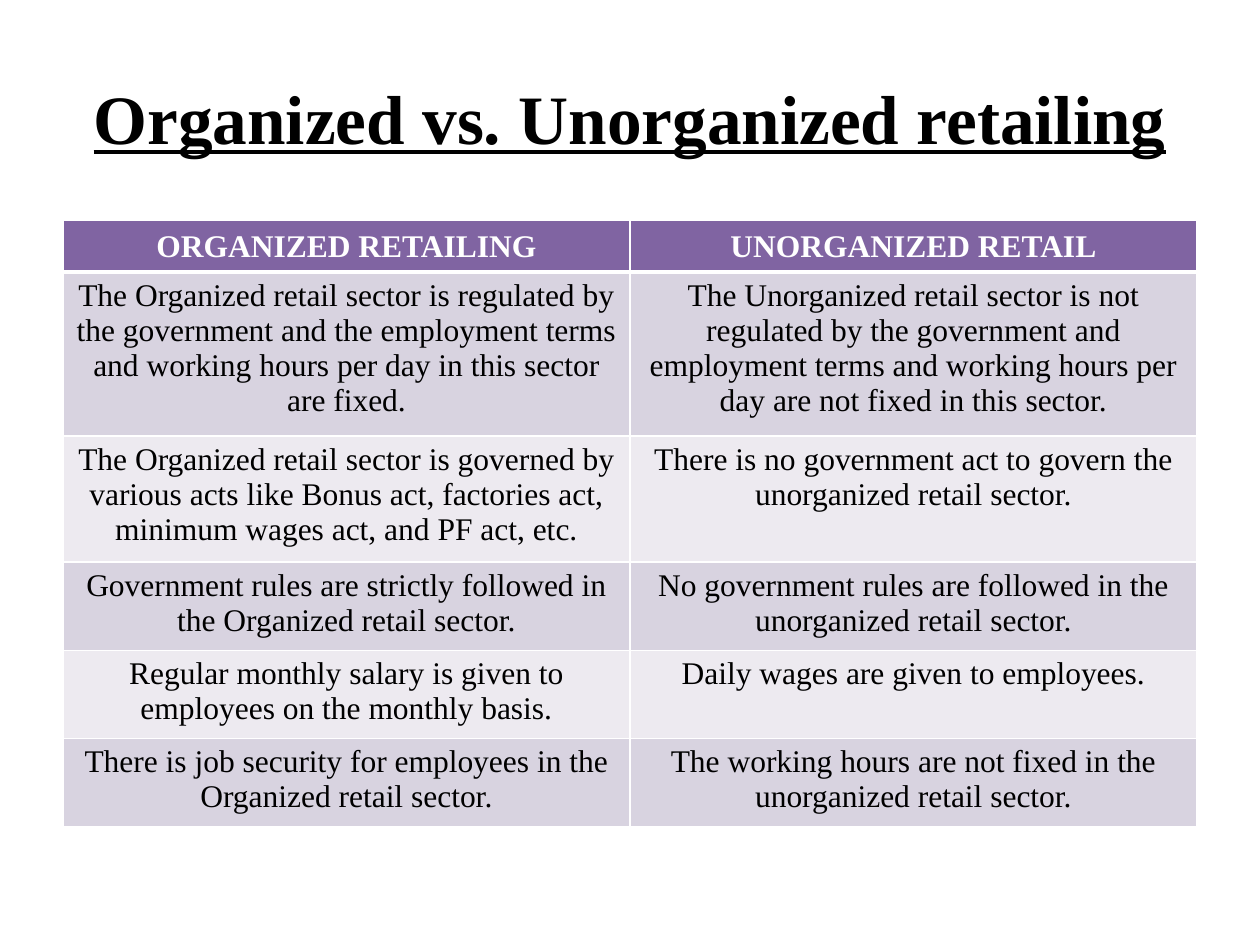
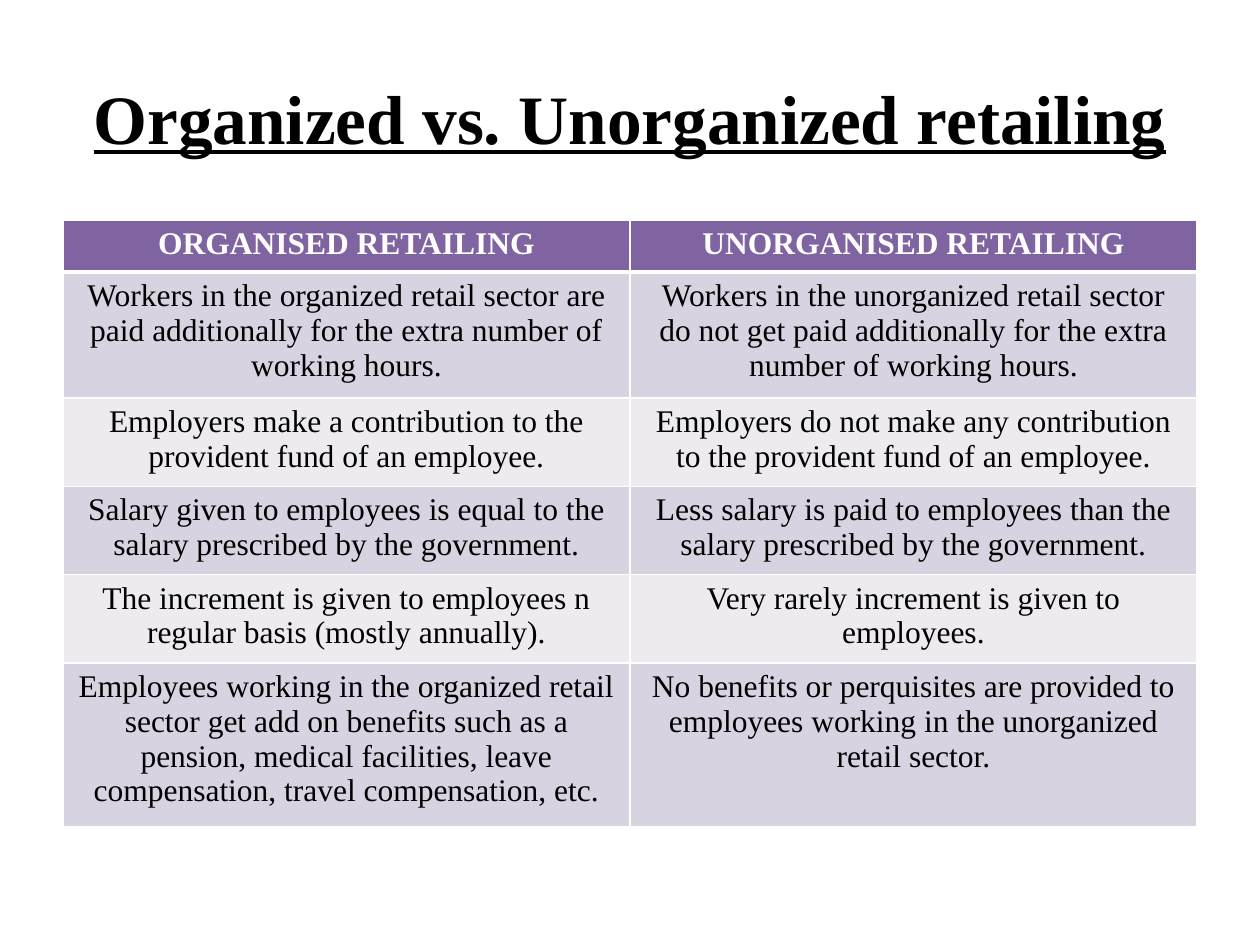
from dataclasses import dataclass

from lxml import etree
from pptx import Presentation
from pptx.dml.color import RGBColor
from pptx.enum import text
from pptx.oxml import ns
from pptx.util import Inches, Pt


@dataclass(frozen=True)
class Theme:
    font: str = "Times New Roman"
    ink: str = "000000"
    paper: str = "FFFFFF"
    head: str = "8064A2"
    bands: tuple = ("D8D3E0", "EDEAF0")
    title: float = 39.6
    body: float = 18
    thin: float = 1
    thick: float = 3


THEME = Theme()
TITLE = "Organized vs. Unorganized retailing"
TITLE_BOX = (0.5, 0.3, 9, 1.25)
TABLE_BOX = (0.5, 1.75, 9, 2.46)

RULES = [
    ("ORGANIZED RETAILING", "UNORGANIZED RETAIL"),
    ("The Organized retail sector is regulated by the government and the employment terms "
     "and working hours per day in this sector are fixed.",
     "The Unorganized retail sector is not regulated by the government and employment terms "
     "and working hours per day are not fixed in this sector."),
    ("The Organized retail sector is governed by various acts like Bonus act, factories act, "
     "minimum wages act, and PF act, etc.",
     "There is no government act to govern the unorganized retail sector."),
    ("Government rules are strictly followed in the Organized retail sector.",
     "No government rules are followed in the unorganized retail sector."),
    ("Regular monthly salary is given to employees on the monthly basis.",
     "Daily wages are given to employees."),
    ("There is job security for employees in the Organized retail sector.",
     "The working hours are not fixed in the unorganized retail sector."),
]

PAY = [
    ("ORGANISED RETAILING", "UNORGANISED RETAILING"),
    ("Workers in the organized retail sector are paid additionally for the extra number of "
     "working hours.",
     "Workers in the unorganized retail sector do not get paid additionally for the extra "
     "number of working hours."),
    ("Employers make a contribution to the provident fund of an employee.",
     "Employers do not make any contribution to the provident fund of an employee."),
    ("Salary given to employees is equal to the salary prescribed by the government.",
     "Less salary is paid to employees than the salary prescribed by the government."),
    ("The increment is given to employees n regular basis (mostly annually).",
     "Very rarely increment is given to employees."),
    ("Employees working in the organized retail sector get add on benefits such as a pension, "
     "medical facilities, leave compensation, travel compensation, etc.",
     "No benefits or perquisites are provided to employees working in the unorganized retail "
     "sector."),
]


def write(frame, words, size=THEME.body, color=THEME.ink, bold=False, line=False):
    frame.word_wrap = True
    para = frame.paragraphs[0]
    para.alignment = text.PP_ALIGN.CENTER
    run = para.add_run()
    run.text = words
    font = run.font
    font.name, font.size = THEME.font, Pt(size)
    font.bold, font.underline = bold, line
    font.color.rgb = RGBColor.from_string(color)


def edge(cell, top, bottom):
    props = cell._tc.get_or_add_tcPr()
    widths = {"lnL": THEME.thin, "lnR": THEME.thin, "lnT": top, "lnB": bottom}
    for spot, (side, width) in enumerate(widths.items()):
        line = etree.Element(ns.qn(f"a:{side}"), w=str(Pt(width)))
        fill = etree.SubElement(line, ns.qn("a:solidFill"))
        etree.SubElement(fill, ns.qn("a:srgbClr"), val=THEME.paper)
        props.insert(spot, line)


def add_title(slide, box, words):
    label = slide.shapes.add_textbox(*map(Inches, box))
    label.text_frame.vertical_anchor = text.MSO_ANCHOR.MIDDLE
    write(label.text_frame, words, size=THEME.title, bold=True, line=True)


def add_grid(slide, box, rows, anchor):
    frame = slide.shapes.add_table(len(rows), len(rows[0]), *map(Inches, box))
    table = frame.table
    for r, row in enumerate(rows):
        head = r == 0
        shade = THEME.head if head else THEME.bands[(r - 1) % 2]
        for c, words in enumerate(row):
            cell = table.cell(r, c)
            cell.fill.solid()
            cell.fill.fore_color.rgb = RGBColor.from_string(shade)
            cell.vertical_anchor = anchor if head else text.MSO_ANCHOR.TOP
            write(cell.text_frame, words, color=THEME.paper if head else THEME.ink, bold=head)
            edge(cell, top=THEME.thick if r == 1 else THEME.thin,
                 bottom=THEME.thick if head else THEME.thin)


def add_page(deck, rows, anchor):
    slide = deck.slides.add_slide(deck.slide_layouts[6])
    add_title(slide, TITLE_BOX, TITLE)
    add_grid(slide, TABLE_BOX, rows, anchor)


def main():
    deck = Presentation()
    deck.slide_width, deck.slide_height = Inches(10), Inches(7.5)
    add_page(deck, RULES, text.MSO_ANCHOR.MIDDLE)
    add_page(deck, PAY, text.MSO_ANCHOR.TOP)
    deck.save("out.pptx")


if __name__ == "__main__":
    main()
